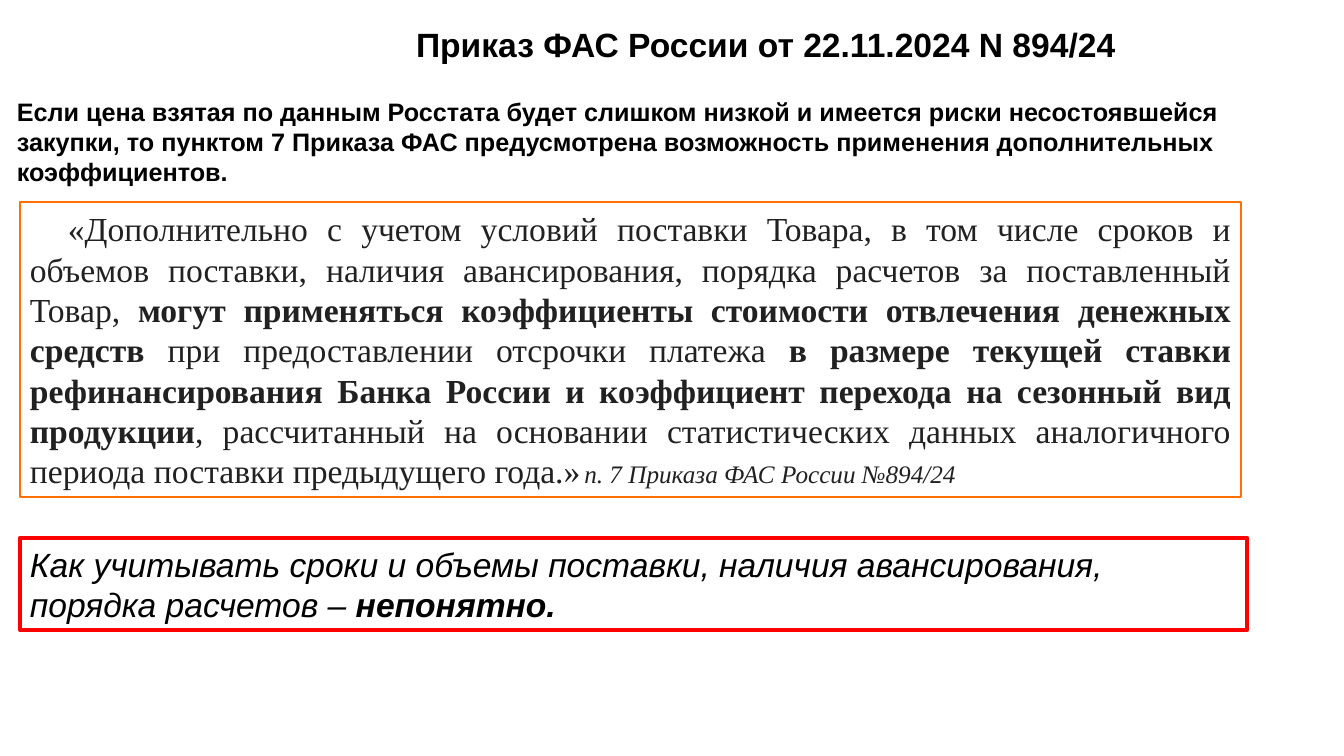
from dataclasses import dataclass

from lxml.etree import SubElement
from pptx import Presentation
from pptx.dml.color import RGBColor
from pptx.enum.shapes import MSO_SHAPE
from pptx.enum.text import MSO_ANCHOR, MSO_AUTO_SIZE, PP_ALIGN
from pptx.oxml.ns import qn
from pptx.util import Emu, Pt

TITLE = [("Приказ ФАС России от 22.11.2024 N 894/24", {"bold": True})]
INTRO = [(
    "Если цена взятая по данным Росстата будет слишком низкой и имеется риски "
    "несостоявшейся закупки, то пунктом 7 Приказа ФАС предусмотрена возможность "
    "применения дополнительных коэффициентов.", {"bold": True})]
QUOTE = [
    ("«Дополнительно с учетом условий поставки Товара, в том числе сроков и объемов "
     "поставки, наличия авансирования, порядка расчетов за поставленный Товар, ", {}),
    ("могут применяться коэффициенты стоимости отвлечения денежных средств ", {"bold": True}),
    ("при предоставлении отсрочки платежа ", {}),
    ("в размере текущей ставки рефинансирования Банка России и коэффициент перехода "
     "на сезонный вид продукции", {"bold": True}),
    (", рассчитанный на основании статистических данных аналогичного периода "
     "поставки предыдущего года.»\t", {}),
    ("п. 7 Приказа ФАС России №894/24", {"italic": True, "size": 18}),
]
QUESTION = [
    ("Как учитывать сроки и объемы поставки, наличия авансирования, "
     "порядка расчетов – ", {"italic": True}),
    ("непонятно.", {"italic": True, "bold": True}),
]

TITLE_BOX = (406, 19, 732, 50)
INTRO_BOX = (7, 91, 1261, 102)
QUOTE_BOX = (20, 202, 1221, 295)
QUESTION_BOX = (20, 538, 1227, 92)
QUOTE_INDENT = 38
CITATION_TAB = 806


@dataclass(frozen=True)
class Theme:
    black: str = "000000"
    ink: str = "212121"
    white: str = "FFFFFF"
    orange: str = "FF7000"
    red: str = "FF0000"
    sans: str = "Arial"
    serif: str = "Times New Roman"
    large: int = 24
    small: int = 18


THEME = Theme()


def px(value):
    return Emu(round(value * 914400 / 100.8))


def place(shape, box):
    shape.left, shape.top, shape.width, shape.height = map(px, box)


def write(shape, runs, size=THEME.large, font=THEME.sans, color=THEME.black,
          align=PP_ALIGN.LEFT, wrap=True, anchor=MSO_ANCHOR.TOP, indent=0, tab=None):
    frame = shape.text_frame
    frame.word_wrap = wrap
    frame.auto_size = MSO_AUTO_SIZE.SHAPE_TO_FIT_TEXT
    frame.vertical_anchor = anchor
    paragraph = frame.paragraphs[0]
    paragraph.alignment = align
    paragraph.space_before = Pt(0)
    paragraph.line_spacing = 1.0
    properties = paragraph._p.get_or_add_pPr()
    if indent:
        properties.set("indent", str(px(indent)))
    if tab:
        stops = SubElement(properties, qn("a:tabLst"))
        SubElement(stops, qn("a:tab"), pos=str(px(tab)), algn="l")
    for text, style in runs:
        run = paragraph.add_run()
        run.text = text
        run.font.name = font
        run.font.size = Pt(style.get("size", size))
        run.font.bold = style.get("bold", False)
        run.font.italic = style.get("italic", False)
        run.font.color.rgb = RGBColor.from_string(color)


def add_frame(slide, box, line, width, fill=None):
    shape = slide.shapes.add_shape(MSO_SHAPE.RECTANGLE, *map(px, box))
    shape.shadow.inherit = False
    if fill:
        shape.fill.solid()
        shape.fill.fore_color.rgb = RGBColor.from_string(fill)
    else:
        shape.fill.background()
    shape.line.color.rgb = RGBColor.from_string(line)
    shape.line.width = Pt(width)
    return shape


def main():
    presentation = Presentation()
    presentation.slide_width, presentation.slide_height = px(1344), px(756)
    slide = presentation.slides.add_slide(presentation.slide_layouts[5])

    title = slide.shapes.title
    place(title, TITLE_BOX)
    write(title, TITLE, wrap=False)

    intro = slide.shapes.add_textbox(*map(px, INTRO_BOX))
    write(intro, INTRO, size=THEME.small)

    quote = add_frame(slide, QUOTE_BOX, THEME.orange, 2, fill=THEME.white)
    write(quote, QUOTE, font=THEME.serif, color=THEME.ink, align=PP_ALIGN.JUSTIFY,
          anchor=MSO_ANCHOR.MIDDLE, indent=QUOTE_INDENT, tab=CITATION_TAB)

    question = add_frame(slide, QUESTION_BOX, THEME.red, 3)
    write(question, QUESTION, anchor=MSO_ANCHOR.MIDDLE)

    presentation.save("out.pptx")


if __name__ == "__main__":
    main()
